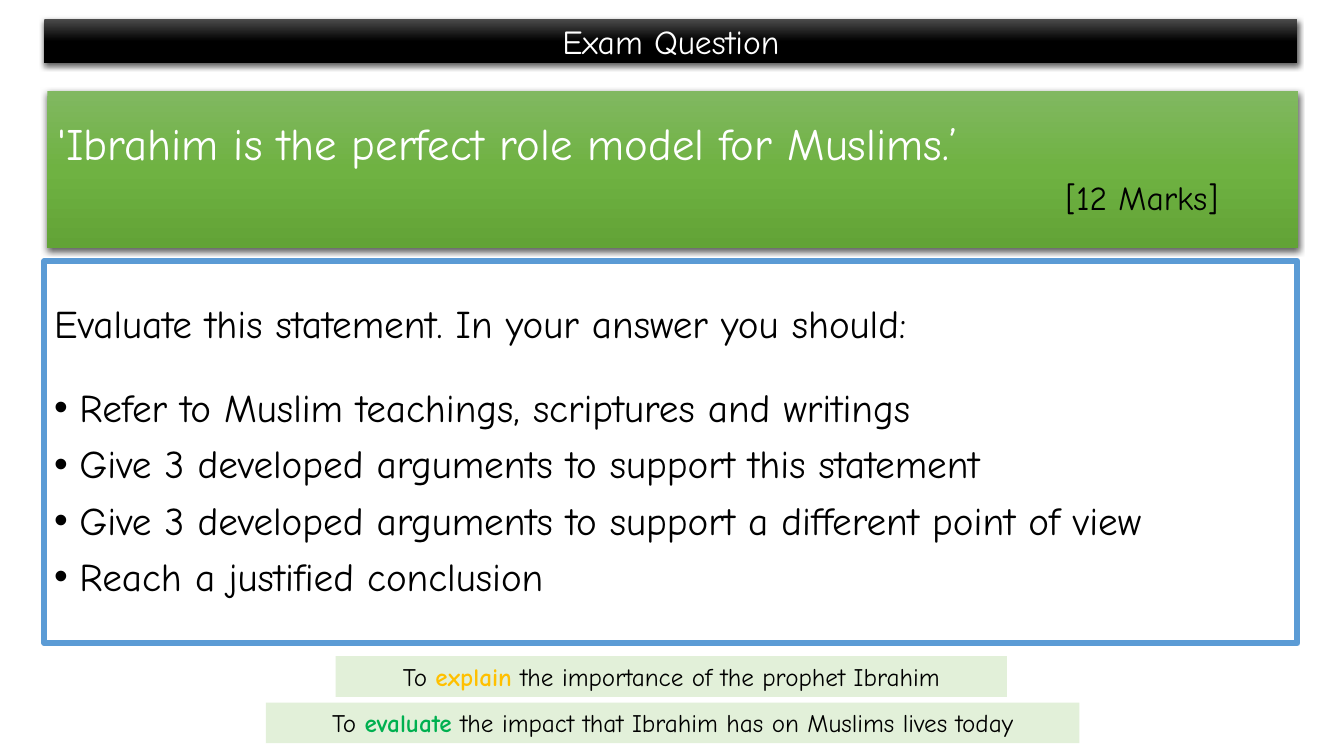
"""Build the exam question slide on Ibrahim as a role model."""
from copy import deepcopy

from lxml import etree
from pptx import Presentation
from pptx.dml.color import RGBColor
from pptx.enum import shapes, text
from pptx.oxml.ns import qn
from pptx.util import Pt

LEFT, RIGHT = text.PP_ALIGN.LEFT, text.PP_ALIGN.RIGHT


def style_box(shape, place, fill, line=None, shadow=False):
    """Place a box and set its fill (one colour or three gradient colours), line and shadow."""
    shape.left, shape.top, shape.width, shape.height = [Pt(length) for length in place]
    if isinstance(fill, str):
        shape.fill.solid()
        shape.fill.fore_color.rgb = RGBColor.from_string(fill)
    else:
        shape.fill.gradient()
        shape.fill.gradient_angle = 270
        stop_list = shape._element.spPr.find(".//" + qn("a:gsLst"))
        stop_list.insert(1, deepcopy(stop_list[0]))
        for stop, position, color in zip(shape.fill.gradient_stops, (0, 0.5, 1), fill):
            stop.position = position
            stop.color.rgb = RGBColor.from_string(color)
    if line:
        shape.line.color.rgb = RGBColor.from_string(line)
        shape.line.width = Pt(4.5)
    else:
        shape.line.fill.background()
    shape.shadow.inherit = False
    if shadow:
        effects = shape._element.spPr.find(qn("a:effectLst"))
        outer = etree.SubElement(effects, qn("a:outerShdw"), blurRad=str(Pt(4.5)),
                                 dist=str(Pt(1.5)), dir="5400000", algn="ctr", rotWithShape="0")
        color = etree.SubElement(outer, qn("a:srgbClr"), val="000000")
        etree.SubElement(color, qn("a:alpha"), val="63000")
    shape.text_frame.word_wrap = True
    shape.text_frame.auto_size = text.MSO_AUTO_SIZE.NONE
    shape.text_frame.vertical_anchor = text.MSO_ANCHOR.MIDDLE


def write(shape, words, size, color="000000", align=text.PP_ALIGN.CENTER, spacing=1.0,
          before=0, bullet=False, right_indent=0, accent=None):
    """Add a paragraph; a part of the words between asterisks is bold in the accent colour."""
    frame = shape.text_frame
    paragraph = frame.add_paragraph() if frame.text else frame.paragraphs[0]
    properties = paragraph._p.get_or_add_pPr()
    if bullet:
        properties.set("marL", str(Pt(18)))
        properties.set("indent", str(Pt(-18)))
        etree.SubElement(properties, qn("a:buFont"), typeface="Arial")
        etree.SubElement(properties, qn("a:buChar"), char="•")
    if right_indent:
        properties.set("marR", str(Pt(right_indent)))
    paragraph.alignment = align
    paragraph.line_spacing = spacing
    paragraph.space_before = Pt(before)
    for index, part in enumerate(words.split("*")):
        run = paragraph.add_run()
        run.text = part
        run.font.name = "Comic Neue"
        run.font.size = Pt(size)
        run.font.bold = index == 1
        run.font.color.rgb = RGBColor.from_string(accent if index == 1 else color)


presentation = Presentation()
presentation.slide_width, presentation.slide_height = Pt(960), Pt(540)
slide = presentation.slides.add_slide(presentation.slide_layouts[5])

title = slide.shapes.title
style_box(title, (33.8, 64.8, 893.5, 112.3), ("81B861", "6FB242", "62A336"), shadow=True)
write(title, "'Ibrahim is the perfect role model for Muslims.’", 32, color="FFFFFF",
      align=LEFT, spacing=0.9)
write(title, "[12 Marks]", 24, align=RIGHT, spacing=0.9, before=8, right_indent=50)

instructions, header, evaluate_aim, explain_aim = [
    slide.shapes.add_shape(shapes.MSO_SHAPE.RECTANGLE, 0, 0, 0, 0) for _ in range(4)]

style_box(instructions, (31.7, 186.5, 895, 272.9), "FFFFFF", line="5B9BD5")
write(instructions, "Evaluate this statement. In your answer you should:", 28,
      align=LEFT, spacing=0.9)
for index, task in enumerate((
        "Refer to Muslim teachings, scriptures and writings",
        "Give 3 developed arguments to support this statement",
        "Give 3 developed arguments to support a different point of view",
        "Reach a justified conclusion")):
    write(instructions, task, 28, align=LEFT, spacing=0.9, before=10 if index else 30, bullet=True)

style_box(header, (31.7, 13.7, 895, 31.7), ("4B4B4B", "000000", "000000"), shadow=True)
write(header, "Exam Question", 24, color="FFFFFF")

for aim, place, words, accent in (
        (evaluate_aim, (190, 501.8, 581, 29),
         "To *evaluate* the impact that Ibrahim has on Muslims lives today", "00B050"),
        (explain_aim, (239.8, 468.7, 479.5, 29),
         "To *explain* the importance of the prophet Ibrahim", "FFC000")):
    style_box(aim, place, "E2F0D9")
    write(aim, words, 18, accent=accent)

presentation.save("out.pptx")
